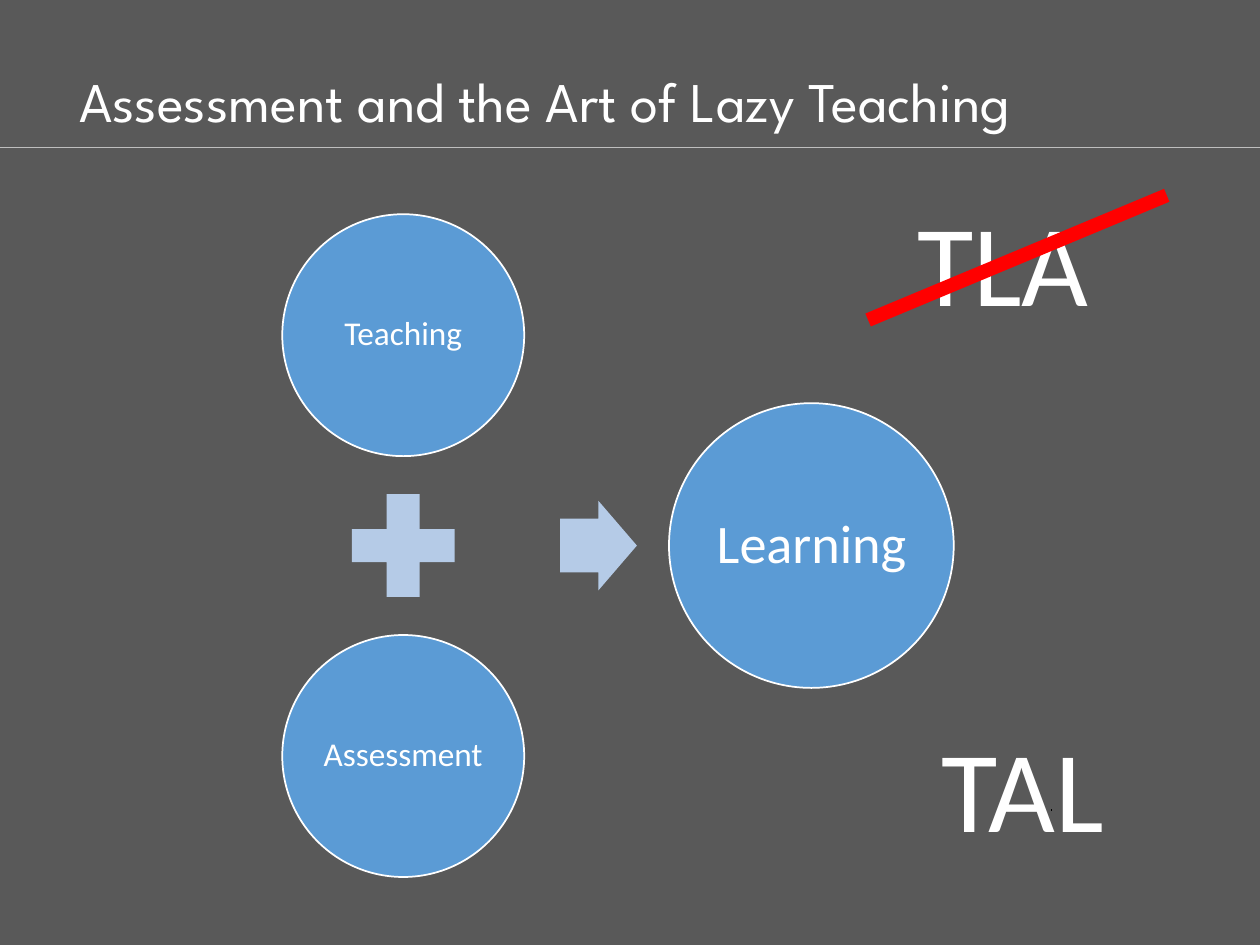
from dataclasses import dataclass

from lxml import etree
from pptx import Presentation
from pptx import util as u
from pptx.dml.color import RGBColor
from pptx.enum import shapes, text
from pptx.oxml.ns import qn


@dataclass(frozen=True)
class Theme:
    background: str = "595959"
    white: str = "FFFFFF"
    circle: str = "5B9BD5"
    operator: str = "B5CBE7"
    rule: str = "BFBFBF"
    strike: str = "FF0000"
    ink: str = "000000"
    title_font: str = "League Spartan"
    body_font: str = "Calibri"
    title_size: int = 32
    part_size: int = 19
    result_size: int = 31
    acronym_size: int = 66


THEME = Theme()


def color(value):
    return RGBColor.from_string(value)


def write(shape, words, size, font=THEME.body_font, align=text.PP_ALIGN.LEFT,
          anchor=text.MSO_ANCHOR.MIDDLE, inset=0.0, side_inset=None):
    frame = shape.text_frame
    frame.text = words
    frame.word_wrap = True
    frame.vertical_anchor = anchor
    frame.margin_top = frame.margin_bottom = u.Inches(inset)
    frame.margin_left = frame.margin_right = u.Inches(
        inset if side_inset is None else side_inset)
    paragraph = frame.paragraphs[0]
    paragraph.alignment = align
    run_font = paragraph.runs[0].font
    run_font.name = font
    run_font.size = u.Pt(size)
    run_font.color.rgb = color(THEME.white)
    return paragraph


def add_text(slide, words, left, top, width, height, size, **style):
    box = slide.shapes.add_textbox(*map(u.Inches, (left, top, width, height)))
    return write(box, words, size, **style)


def add_filled(slide, kind, center_x, center_y, width, height, fill):
    shape = slide.shapes.add_shape(
        kind, u.Inches(center_x - width / 2), u.Inches(center_y - height / 2),
        u.Inches(width), u.Inches(height))
    shape.shadow.inherit = False
    shape.fill.solid()
    shape.fill.fore_color.rgb = color(fill)
    shape.line.fill.background()
    return shape


def add_circle(slide, words, center_x, center_y, diameter, size):
    circle = add_filled(slide, shapes.MSO_SHAPE.OVAL, center_x, center_y,
                        diameter, diameter, THEME.circle)
    circle.line.color.rgb = color(THEME.white)
    circle.line.width = u.Pt(1)
    # The label fills the square inscribed in the circle
    side = diameter / 2 ** 0.5
    paragraph = add_text(slide, words, center_x - side / 2, center_y - side / 2,
                         side, side, size, align=text.PP_ALIGN.CENTER, inset=0.03)
    paragraph.line_spacing = 0.9


def add_line(slide, start, end, line_color, width):
    line = slide.shapes.add_connector(
        shapes.MSO_CONNECTOR.STRAIGHT, *map(u.Inches, (*start, *end)))
    line.line.color.rgb = color(line_color)
    line.line.width = u.Pt(width)
    etree.SubElement(line._element.spPr, qn("a:effectLst"))


def add_acronym(slide, words, left, top):
    add_text(slide, words, left, top, 2.01, 1.21, THEME.acronym_size,
             anchor=text.MSO_ANCHOR.TOP, inset=0.05, side_inset=0.1)


def main():
    presentation = Presentation()
    presentation.slide_width = u.Inches(10)
    presentation.slide_height = u.Inches(7.5)
    slide = presentation.slides.add_slide(presentation.slide_layouts[6])
    slide.background.fill.solid()
    slide.background.fill.fore_color.rgb = color(THEME.background)

    # Title and rule
    add_line(slide, (-0.07, 1.17), (10.07, 1.17), THEME.rule, 0.5)
    add_text(slide, "Assessment and the Art of Lazy Teaching", 0.63, 0.47,
             8.74, 0.65, THEME.title_size, font=THEME.title_font)

    # Equation: teaching plus assessment leads to learning
    parts_x, middle_y, step = 3.2, 4.33, 1.67
    add_circle(slide, "Teaching", parts_x, middle_y - step, 1.92, THEME.part_size)
    add_filled(slide, shapes.MSO_SHAPE.MATH_PLUS, parts_x, middle_y,
               1.11, 1.11, THEME.operator)
    add_circle(slide, "Assessment", parts_x, middle_y + step, 1.92, THEME.part_size)
    arrow = add_filled(slide, shapes.MSO_SHAPE.RIGHT_ARROW, 4.75, middle_y,
                       0.61, 0.71, THEME.operator)
    arrow.adjustments[0] = 0.6
    arrow.adjustments[1] = 0.5
    add_circle(slide, "Learning", 6.44, middle_y, 2.26, THEME.result_size)

    # Acronyms, the first one struck out
    add_acronym(slide, "TAL", 7.37, 5.64)
    add_acronym(slide, "TLA", 7.18, 1.47)
    add_line(slide, (6.89, 2.54), (9.26, 1.55), THEME.strike, 8)

    # Small ink mark
    add_line(slide, (8.34, 6.43), (8.35, 6.43), THEME.ink, 1.5)

    presentation.save("out.pptx")


if __name__ == "__main__":
    main()
